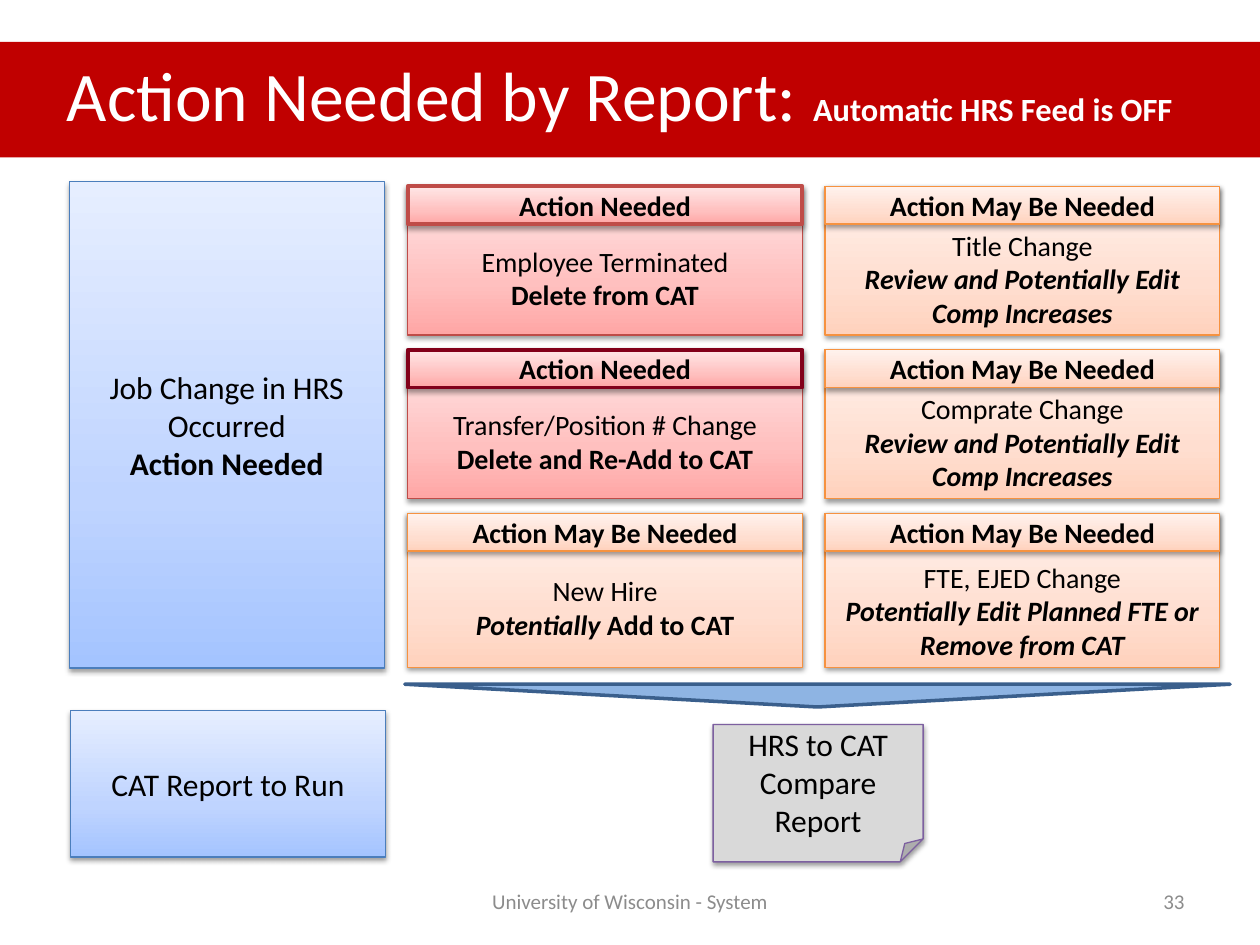
import copy

import pptx
import pptx.dml.color
import pptx.enum.shapes
import pptx.enum.text
import pptx.oxml
import pptx.oxml.ns
import pptx.util

Pt = pptx.util.Pt
SHAPES = pptx.enum.shapes.MSO_SHAPE
ANCHOR = pptx.enum.text.MSO_ANCHOR
ALIGN = pptx.enum.text.PP_ALIGN

BLUE = ("A4C4FF", "BFD4FF", "E6EEFF")
RED = ("FFA6A5", "FFC0BF", "FFE7E7")
ORANGE = ("FFD2BD", "FFDED0", "FFF2ED")
STOPS = (0, 0.35, 1)
BLUE_LINE, RED_LINE, DARK_RED_LINE, ORANGE_LINE = "4B7EBC", "BF4C48", "82001A", "F69240"

NEEDED = ("Action Needed", RED, RED_LINE, RED_LINE, 2.25)
NEEDED_DARK = ("Action Needed", RED, RED_LINE, DARK_RED_LINE, 2.25)
MAY_BE = ("Action May Be Needed", ORANGE, ORANGE_LINE, ORANGE_LINE, 0.75)

TITLE = [[("Action Needed by Report: ", "", 39.8), ("Automatic HRS Feed is OFF", "b", 18.5)]]
BLUE_BOXES = [
    ((39.6, 103.7, 180, 278), [[("Job Change in HRS Occurred", "")], [("Action Needed", "b")]]),
    ((40.3, 406, 180, 83.8), [[("CAT Report to Run", "")]]),
]
REVIEW = [("Review and Potentially Edit Comp Increases", "bi")]
CARD_COLUMNS = [
    (ANCHOR.MIDDLE, [
        (NEEDED, [[("Employee Terminated", "")], [("Delete from CAT", "b")]]),
        (NEEDED_DARK, [[("Transfer/Position # Change", "")], [("Delete and Re-Add to CAT", "b")]]),
        (MAY_BE, [[("New Hire", "")], [("Potentially", "bi"), (" Add to CAT", "b")]]),
    ]),
    (ANCHOR.BOTTOM, [
        (MAY_BE, [[("Title Change", "")], REVIEW]),
        (MAY_BE, [[("Comprate Change", "")], REVIEW]),
        (MAY_BE, [[("FTE, EJED Change", "")],
                  [("Potentially Edit Planned FTE or Remove from CAT", "bi")]]),
    ]),
]
FOOTERS = [
    ((246, 500.5, 228, 28.75), "University of Wisconsin - System", ALIGN.CENTER),
    ((516, 500.5, 168, 28.75), "33", ALIGN.RIGHT),
]
CARD_LEFT, CARD_TOP, CARD_WIDTH = 233, 106.5, 225.5
COLUMN_STEP, ROW_STEP = 238.5, 93.4
CARD_HEIGHTS = (85, 85, 88)
HEADER_HEIGHT = 21.6
BLANK_LINE = 19.5


def color(value):
    return pptx.dml.color.RGBColor.from_string(value)


def write(shape, paragraphs, size, text_color="000000", align=ALIGN.CENTER, anchor=ANCHOR.MIDDLE):
    frame = shape.text_frame
    frame.word_wrap = True
    frame.vertical_anchor = anchor
    for index, runs in enumerate(paragraphs):
        paragraph = frame.add_paragraph() if index else frame.paragraphs[0]
        paragraph.alignment = align
        paragraph.font.size = Pt(size)
        paragraph.font.name = "Calibri"
        paragraph.font.color.rgb = color(text_color)
        for text, style, *run_size in runs:
            run = paragraph.add_run()
            run.text = text
            run.font.bold = "b" in style
            run.font.italic = "i" in style
            if run_size:
                run.font.size = Pt(run_size[0])


def fill_gradient(shape, colors):
    shape.fill.gradient()
    shape.fill.gradient_angle = 90
    stop_list = shape._element.spPr.find(".//" + pptx.oxml.ns.qn("a:gsLst"))
    stop_list.insert(1, copy.deepcopy(stop_list[0]))
    for stop, position, value in zip(shape.fill.gradient_stops, STOPS, colors):
        stop.position = position
        stop.color.rgb = color(value)


def add_shadow(shape):
    effects = shape._element.spPr.find(pptx.oxml.ns.qn("a:effectLst"))
    effects.append(pptx.oxml.parse_xml(
        f'<a:outerShdw {pptx.oxml.ns.nsdecls("a")} blurRad="{Pt(3.1)}" dist="{Pt(1.6)}" '
        'dir="5400000" rotWithShape="0"><a:srgbClr val="000000"><a:alpha val="38000"/>'
        '</a:srgbClr></a:outerShdw>'))


def add_box(slide, box, fill, line=None, width=0.75, kind=SHAPES.RECTANGLE, shadow=True):
    shape = slide.shapes.add_shape(kind, *map(Pt, box))
    shape.shadow.inherit = False
    if isinstance(fill, tuple):
        fill_gradient(shape, fill)
    else:
        shape.fill.solid()
        shape.fill.fore_color.rgb = color(fill)
    if line:
        shape.line.color.rgb = color(line)
        shape.line.width = Pt(width)
    else:
        shape.line.fill.background()
    if shadow:
        add_shadow(shape)
    return shape


def add_card(slide, left, top, height, kind, paragraphs, anchor):
    heading, fill, card_line, header_line, header_width = kind
    card = add_box(slide, (left, top, CARD_WIDTH, height), fill, card_line)
    write(card, paragraphs, 16, anchor=anchor)
    if anchor == ANCHOR.MIDDLE:
        card.text_frame.margin_top = Pt(3.6 + BLANK_LINE)
    header = add_box(slide, (left, top, CARD_WIDTH, HEADER_HEIGHT), fill, header_line, header_width)
    write(header, [[(heading, "b")]], 16)


def main():
    presentation = pptx.Presentation()
    presentation.slide_width, presentation.slide_height = Pt(720), Pt(540)
    slide = presentation.slides.add_slide(presentation.slide_layouts[6])

    banner = add_box(slide, (0, 24, 720, 66), "C00000", shadow=False)
    write(banner, TITLE, 39.8, "FFFFFF", ALIGN.LEFT, ANCHOR.TOP)
    banner.text_frame.margin_left = Pt(38.2)
    banner.text_frame.margin_top = Pt(5.5)

    for box, paragraphs in BLUE_BOXES:
        write(add_box(slide, box, BLUE, BLUE_LINE), paragraphs, 18)

    for column, (anchor, cards) in enumerate(CARD_COLUMNS):
        for row, (kind, paragraphs) in enumerate(cards):
            add_card(slide, CARD_LEFT + column * COLUMN_STEP, CARD_TOP + row * ROW_STEP,
                     CARD_HEIGHTS[row], kind, paragraphs, anchor)

    pointer = add_box(slide, (231.3, 391, 471.6, 13), "8EB4E3", "3A5F8C", 2,
                      SHAPES.ISOSCELES_TRIANGLE, shadow=False)
    pointer.rotation = 180
    report = add_box(slide, (407.5, 414, 120, 78.5), "D9D9D9", "7D60A0", kind=SHAPES.FOLDED_CORNER)
    write(report, [[("HRS to CAT Compare Report", "")]], 18)

    for box, text, align in FOOTERS:
        write(slide.shapes.add_textbox(*map(Pt, box)), [[(text, "")]], 12, "8C8C8C", align)

    presentation.save("out.pptx")


if __name__ == "__main__":
    main()
